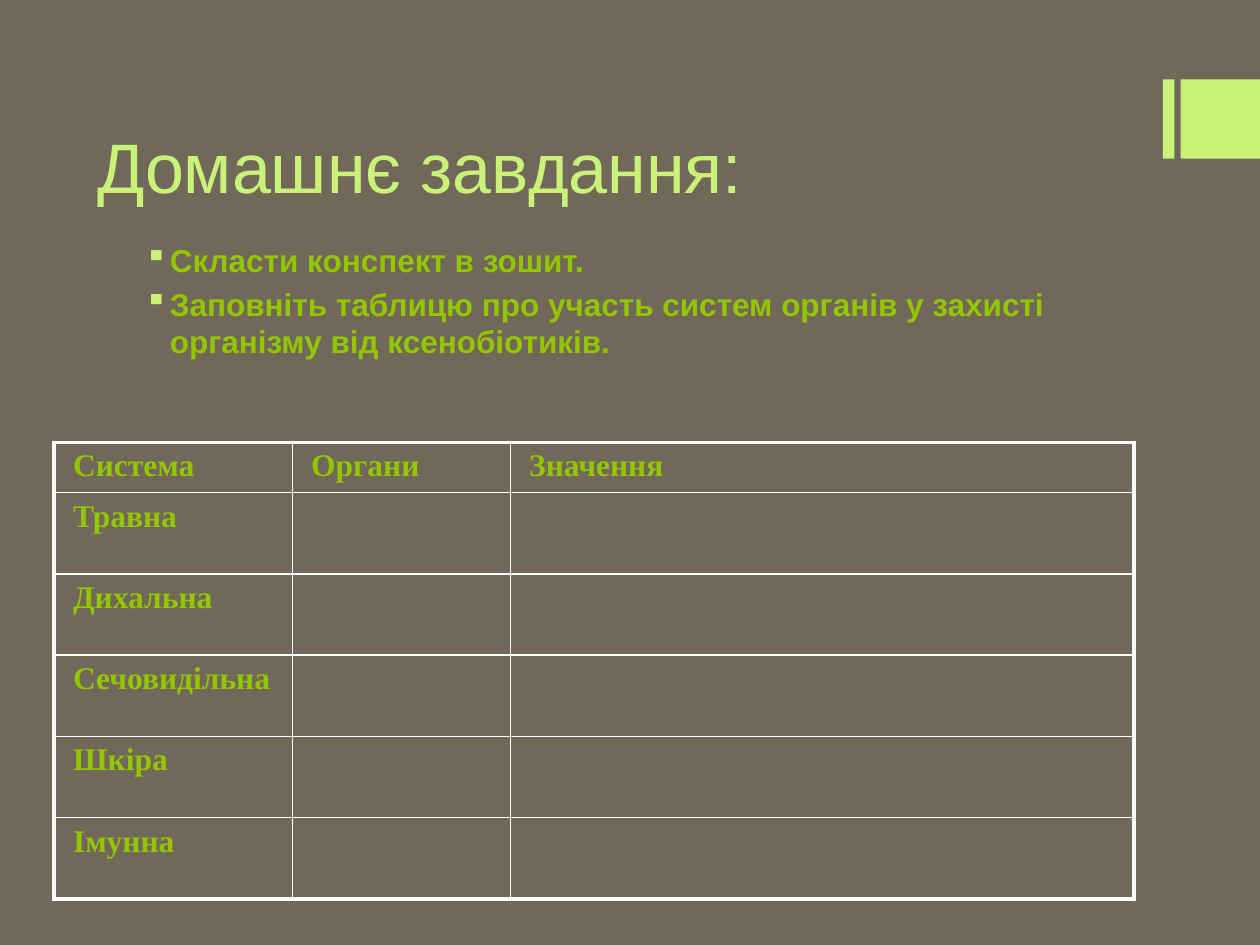
from dataclasses import dataclass

from lxml import etree
from pptx import Presentation
from pptx.dml.color import RGBColor
from pptx.enum.shapes import MSO_SHAPE
from pptx.enum.text import MSO_ANCHOR, PP_ALIGN
from pptx.oxml.ns import qn
from pptx.util import Inches, Pt

RECT = MSO_SHAPE.RECTANGLE
LEFT = PP_ALIGN.LEFT
TOP, BOTTOM = MSO_ANCHOR.TOP, MSO_ANCHOR.BOTTOM


@dataclass(frozen=True)
class Theme:
    back: str = "71685A"
    lime: str = "CAF278"
    green: str = "94C600"
    line: str = "FFFFFF"
    sans: str = "Arial"
    serif: str = "Times New Roman"
    head: float = 40
    body: float = 18
    thick: float = 2.25
    thin: float = 1


THEME = Theme()
TITLE = "Домашнє завдання:"
TASKS = [
    "Скласти конспект в зошит.",
    "Заповніть таблицю про участь систем органів у захисті організму від ксенобіотиків.",
]
HEADS = ["Система", "Органи", "Значення"]
SYSTEMS = ["Травна", "Дихальна", "Сечовидільна", "Шкіра", "Імунна"]
WIDTHS = [1.89, 1.73, 4.95]
HEAD_H, ROW_H = 0.38, 0.645


def rgb(code):
    return RGBColor.from_string(code)


def style(font, name, size, color, bold=False):
    values = {"name": name, "size": Pt(size), "bold": bold}
    for key, value in values.items():
        setattr(font, key, value)
    font.color.rgb = rgb(color)


def place(shape, box):
    for key, value in zip(("left", "top", "width", "height"), box):
        setattr(shape, key, Inches(value))


def add_color(parent, code):
    etree.SubElement(parent, qn("a:srgbClr"), val=code)


def add_marks(slide, box):
    """Two blocks at the right edge: a thin bar, a gap and a square."""
    left, top, width, side = box
    for x, w in ((left, 0.09), (left + width - side, side)):
        mark = slide.shapes.add_shape(
            RECT, Inches(x), Inches(top), Inches(w), Inches(side))
        mark.shadow.inherit = False
        mark.fill.solid()
        mark.fill.fore_color.rgb = rgb(THEME.lime)
        mark.line.fill.background()


def add_title(slide, box):
    title = slide.shapes.title
    place(title, box)
    frame = title.text_frame
    frame.text = TITLE
    frame.vertical_anchor = BOTTOM
    para = frame.paragraphs[0]
    para.alignment = LEFT
    style(para.font, THEME.sans, THEME.head, THEME.lime)


def add_bullet(para):
    props = para._p.get_or_add_pPr()
    props.set("marL", str(Inches(0.25)))
    props.set("indent", str(Inches(-0.2)))
    add_color(etree.SubElement(props, qn("a:buClr")), THEME.lime)
    etree.SubElement(props, qn("a:buChar"), char="▪")


def add_tasks(slide, box):
    frame = slide.shapes.add_textbox(*map(Inches, box)).text_frame
    frame.word_wrap = True
    for i, task in enumerate(TASKS):
        para = frame.paragraphs[0] if i == 0 else frame.add_paragraph()
        para.text = task
        add_bullet(para)
        if i:
            para.space_before = Pt(THEME.body * 0.2)
        style(para.font, THEME.sans, THEME.body, THEME.green, True)


def add_borders(cell, outer):
    """Thick lines on the outer sides, thin ones elsewhere."""
    props = cell._tc.get_or_add_tcPr()
    for side in "LRTB":
        width = THEME.thick if side in outer else THEME.thin
        line = etree.SubElement(props, qn(f"a:ln{side}"), w=str(Pt(width)))
        add_color(etree.SubElement(line, qn("a:solidFill")), THEME.line)


def add_grid(slide, box):
    rows = [HEADS] + [[name, "", ""] for name in SYSTEMS]
    last, end = len(rows) - 1, len(HEADS) - 1
    table = slide.shapes.add_table(
        len(rows), len(HEADS), *map(Inches, box)).table
    table.first_row = table.horz_banding = False
    for col, width in zip(table.columns, WIDTHS):
        col.width = Inches(width)
    for r, names in enumerate(rows):
        table.rows[r].height = Inches(ROW_H if r else HEAD_H)
        for c, name in enumerate(names):
            cell = table.cell(r, c)
            edges = {"T": r == 0, "B": r == last, "L": c == 0, "R": c == end}
            add_borders(cell, [side for side, on in edges.items() if on])
            cell.fill.background()
            cell.vertical_anchor = TOP
            para = cell.text_frame.paragraphs[0]
            para.text = name
            para._p.get_or_add_pPr().set("marL", str(Inches(0.05)))
            style(para.font, THEME.serif, THEME.body, THEME.green, True)


def main():
    deck = Presentation()
    deck.slide_width, deck.slide_height = Inches(10), Inches(7.5)
    slide = deck.slides.add_slide(deck.slide_layouts[5])
    slide.background.fill.solid()
    slide.background.fill.fore_color.rgb = rgb(THEME.back)

    add_marks(slide, (9.23, 0.63, 0.77, 0.63))
    add_title(slide, (0.67, 0.44, 8, 1.26))
    add_tasks(slide, (1, 1.86, 8.17, 1.65))
    add_grid(slide, (0.43, 3.51, sum(WIDTHS), HEAD_H + ROW_H * len(SYSTEMS)))
    deck.save("out.pptx")


if __name__ == "__main__":
    main()
